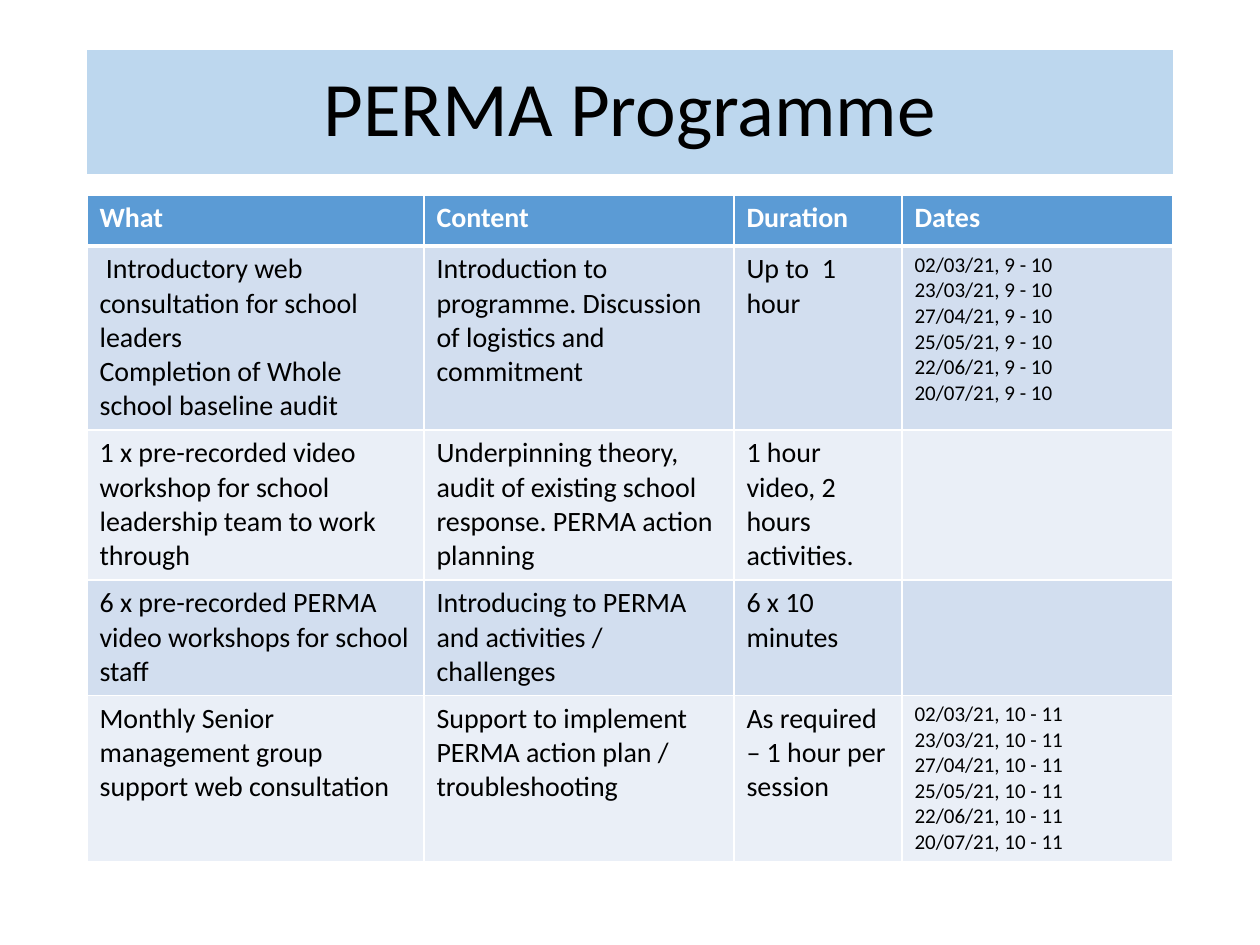
from dataclasses import dataclass

from lxml.etree import SubElement
from pptx import Presentation
from pptx.dml.color import RGBColor as RGB
from pptx.enum.text import MSO_ANCHOR as Anchor, MSO_AUTO_SIZE as AutoSize, PP_ALIGN as Align
from pptx.oxml.ns import qn
from pptx.util import Emu, Pt


@dataclass(frozen=True)
class Theme:
    font: str = "Calibri"
    title_size: int = 44
    body_size: int = 16
    date_size: int = 12
    text: str = "000000"
    white: str = "FFFFFF"
    title_fill: str = "BDD7EE"
    header_fill: str = "5B9BD5"
    bands: tuple = ("D2DEEF", "EAEFF7")


THEME = Theme()
EMU_PER_PX = 914400 / 126
LEFT, WIDTH = 87, 1086
COL_WIDTHS = (337, 310, 168, 271)
ROW_HEIGHTS = (51, 184, 150, 115, 166)
DATE_COL = 3
DAYS = ("02/03/21", "23/03/21", "27/04/21", "25/05/21", "22/06/21", "20/07/21")


def px(n):
    return Emu(round(n * EMU_PER_PX))


def sessions(hours):
    return "\n".join(f"{day}, {hours}" for day in DAYS)


ROWS = (
    ("What", "Content", "Duration", "Dates"),
    (" Introductory web consultation for school leaders\n"
     "Completion of Whole school baseline audit",
     "Introduction to programme. Discussion of logistics and commitment",
     "Up to  1 hour", sessions("9 - 10")),
    ("1 x pre-recorded video workshop for school leadership team to work through",
     "Underpinning theory, audit of existing school response. PERMA action planning",
     "1 hour video, 2 hours activities.", ""),
    ("6 x pre-recorded PERMA video workshops for school staff",
     "Introducing to PERMA and activities / challenges",
     "6 x 10 minutes", ""),
    ("Monthly Senior management group support web consultation",
     "Support to implement  PERMA action plan / troubleshooting",
     "As required – 1 hour per session", sessions("10 - 11")),
)


def paint(target, color):
    target.fill.solid()
    target.fill.fore_color.rgb = RGB.from_string(color)


def style_text(tf, size, color, bold=False):
    for p in tf.paragraphs:
        for font in (p.font, *(r.font for r in p.runs)):
            font.name, font.size, font.bold = THEME.font, Pt(size), bold
            font.color.rgb = RGB.from_string(color)


def set_borders(cell, bottom):
    """Draw white cell edges, 1 pt wide except for the bottom one."""
    tc_pr = cell._tc.get_or_add_tcPr()
    for side, width in (("L", 1), ("R", 1), ("T", 1), ("B", bottom)):
        ln = SubElement(tc_pr, qn(f"a:ln{side}"), w=str(Pt(width)))
        SubElement(SubElement(ln, qn("a:solidFill")), qn("a:srgbClr"), val=THEME.white)


def add_title(s, text):
    sp = s.shapes.title
    sp.left, sp.top, sp.width, sp.height = px(LEFT), px(50), px(WIDTH), px(124)
    paint(sp, THEME.title_fill)
    tf = sp.text_frame
    tf.text = text
    tf.auto_size = AutoSize.NONE
    tf.vertical_anchor = Anchor.MIDDLE
    p = tf.paragraphs[0]
    p.alignment, p.line_spacing = Align.CENTER, 0.9
    style_text(tf, THEME.title_size, THEME.text)


def fill_cell(cell, text, row, col):
    header = row == 0
    set_borders(cell, bottom=3 if header else 1)
    paint(cell, THEME.header_fill if header else THEME.bands[(row - 1) % 2])
    cell.text_frame.text = text
    size = THEME.date_size if col == DATE_COL and not header else THEME.body_size
    style_text(cell.text_frame, size, THEME.white if header else THEME.text, header)


def add_programme_table(s):
    table = s.shapes.add_table(len(ROWS), len(COL_WIDTHS), px(LEFT), px(195),
                               px(WIDTH), px(sum(ROW_HEIGHTS))).table
    for column, width in zip(table.columns, COL_WIDTHS):
        column.width = px(width)
    for i, (height, texts) in enumerate(zip(ROW_HEIGHTS, ROWS)):
        table.rows[i].height = px(height)
        for j, text in enumerate(texts):
            fill_cell(table.cell(i, j), text, i, j)


def main():
    prs = Presentation()
    prs.slide_width, prs.slide_height = px(1260), px(945)
    s = prs.slides.add_slide(prs.slide_layouts[5])
    add_title(s, "PERMA Programme")
    add_programme_table(s)
    prs.save("out.pptx")


if __name__ == "__main__":
    main()
